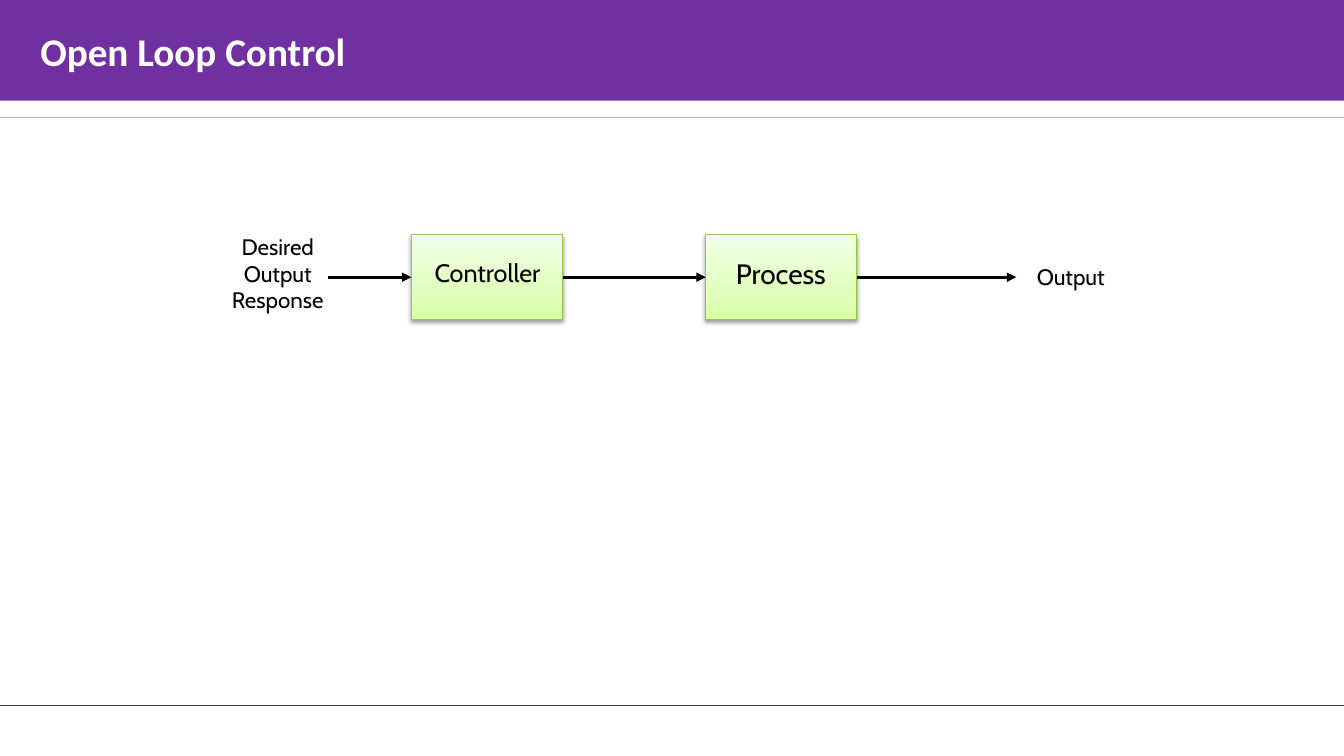
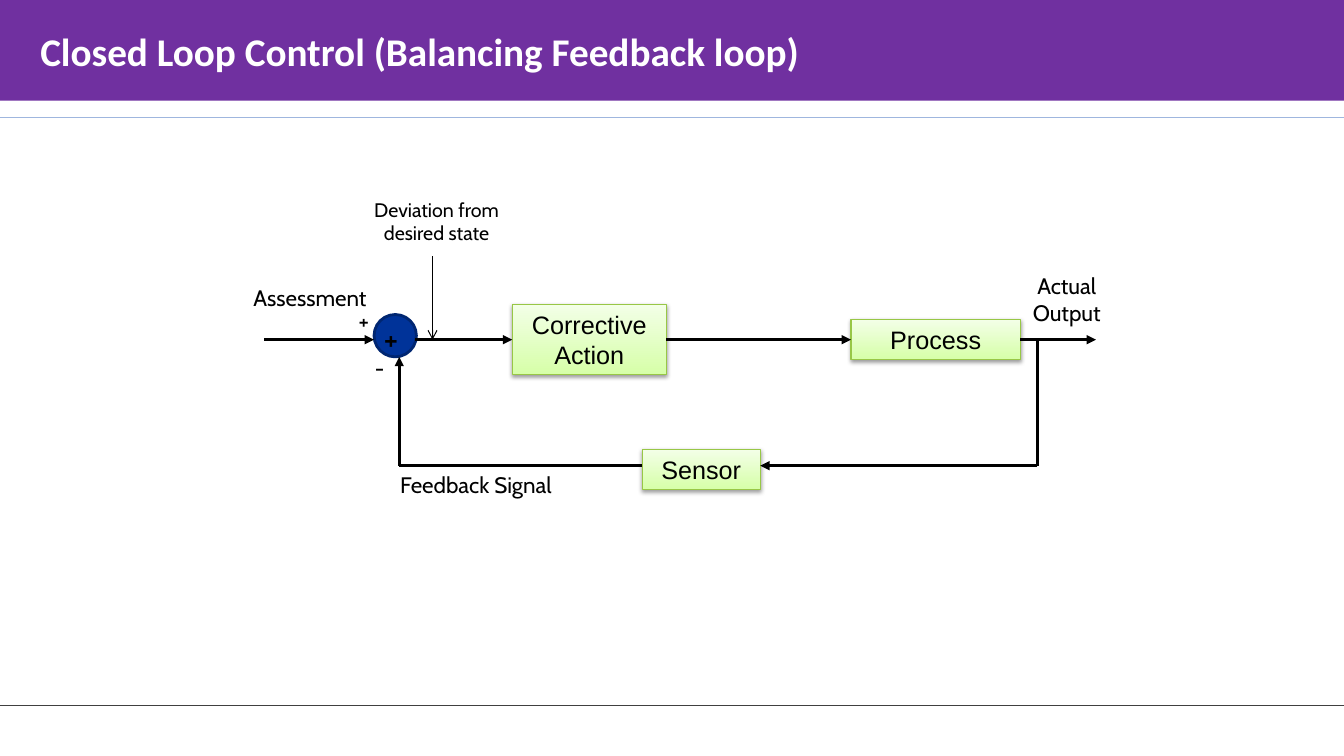
from dataclasses import dataclass
from typing import Optional

from lxml import etree
from pptx import Presentation
from pptx.dml import color
from pptx.enum import shapes, text
from pptx.oxml import ns
from pptx.util import Inches, Pt

# Shared look
WIDTH, HEIGHT = 13.33, 7.5
PURPLE, WHITE, BLACK = "7030A0", "FFFFFF", "000000"
NAVY, DARK_NAVY = "003399", "002671"
TOP_RULE, BOTTOM_RULE = "9FB6DE", "404040"
GREEN_BOTTOM, GREEN_TOP, GREEN_EDGE = "D6FFA8", "F3FFE7", "98C746"
TITLE_FONT, LABEL_FONT, BOX_FONT = "Calibri", "Cabin", "Arial"
TOP, LEFT, BOTTOM, RIGHT = range(4)


@dataclass
class Label:
    words: str
    left: float
    top: float
    width: float
    height: float
    size: float = 16
    centred: bool = True


@dataclass
class Block:
    left: float
    top: float
    width: float
    height: float
    words: str = ""


@dataclass
class Line:
    start: tuple[float, float]
    end: tuple[float, float]
    arrow: Optional[str] = "triangle"
    width: float = 2.25
    colour: str = BLACK
    # Block and side that an end is joined to
    begin_at: Optional[tuple] = None
    end_at: Optional[tuple] = None


def rgb(value: str) -> color.RGBColor:
    return color.RGBColor.from_string(value)


def write(shape, words: str, *, size: float, font: str = LABEL_FONT,
          colour: str = BLACK, bold: bool = False, centred: bool = True,
          anchor=text.MSO_ANCHOR.TOP, left_inset: float = 0.1) -> None:
    frame = shape.text_frame
    frame.word_wrap = True
    frame.vertical_anchor = anchor
    frame.margin_left = Inches(left_inset)
    paragraph = frame.paragraphs[0]
    paragraph.alignment = text.PP_ALIGN.CENTER if centred else text.PP_ALIGN.LEFT
    run = paragraph.add_run()
    run.text = words
    run.font.name = font
    run.font.size = Pt(size)
    run.font.bold = bold
    run.font.color.rgb = rgb(colour)


def add_plain_shape(slide, kind, left: float, top: float, width: float, height: float):
    shape = slide.shapes.add_shape(
        kind, Inches(left), Inches(top), Inches(width), Inches(height))
    shape.shadow.inherit = False
    return shape


def add_label(slide, label: Label) -> None:
    box = slide.shapes.add_textbox(
        Inches(label.left), Inches(label.top), Inches(label.width), Inches(label.height))
    write(box, label.words, size=label.size, centred=label.centred)


def add_soft_shadow(shape) -> None:
    effects = shape._element.spPr.find(ns.qn("a:effectLst"))
    shadow = etree.SubElement(
        effects, ns.qn("a:outerShdw"), blurRad=str(Pt(3.1)), dist=str(Pt(1.6)),
        dir="5400000", rotWithShape="0")
    tint = etree.SubElement(shadow, ns.qn("a:srgbClr"), val=BLACK)
    etree.SubElement(tint, ns.qn("a:alpha"), val="38000")


def add_block(slide, block: Block):
    shape = add_plain_shape(slide, shapes.MSO_SHAPE.RECTANGLE,
                            block.left, block.top, block.width, block.height)
    shape.fill.gradient()
    shape.fill.gradient_angle = 90
    for stop, tone in zip(shape.fill.gradient_stops, (GREEN_BOTTOM, GREEN_TOP)):
        stop.color.rgb = rgb(tone)
    shape.line.color.rgb = rgb(GREEN_EDGE)
    shape.line.width = Pt(0.75)
    add_soft_shadow(shape)
    if block.words:
        write(shape, block.words, size=18, font=BOX_FONT)
    return shape


def add_line(slide, line: Line) -> None:
    points = [Inches(value) for value in (*line.start, *line.end)]
    connector = slide.shapes.add_connector(shapes.MSO_CONNECTOR.STRAIGHT, *points)
    if line.begin_at:
        connector.begin_connect(*line.begin_at)
    if line.end_at:
        connector.end_connect(*line.end_at)
    connector.line.color.rgb = rgb(line.colour)
    connector.line.width = Pt(line.width)
    if line.arrow:
        etree.SubElement(connector.line._get_or_add_ln(), ns.qn("a:tailEnd"), type=line.arrow)
    etree.SubElement(connector._element.spPr, ns.qn("a:effectLst"))


def add_base_slide(presentation, title: str):
    """Add a slide with the two rules and the title band."""
    slide = presentation.slides.add_slide(presentation.slide_layouts[6])
    for y, colour in ((1.16, TOP_RULE), (7, BOTTOM_RULE)):
        add_line(slide, Line((0, y), (WIDTH, y), arrow=None, width=0.5, colour=colour))
    band = add_plain_shape(slide, shapes.MSO_SHAPE.RECTANGLE, 0, 0, WIDTH, 1)
    band.fill.solid()
    band.fill.fore_color.rgb = rgb(PURPLE)
    band.line.fill.background()
    write(band, title, size=28, font=TITLE_FONT, colour=WHITE, bold=True,
          centred=False, anchor=text.MSO_ANCHOR.MIDDLE, left_inset=0.4)
    return slide


def build_open_loop(presentation) -> None:
    slide = add_base_slide(presentation, "Open Loop Control")
    axis = 2.75

    # Blocks
    controller, process = [
        add_block(slide, Block(left, axis - 0.42, 1.5, 0.84)) for left in (4.08, 7)]

    # Signal path
    for line in (
        Line((3.25, axis), (4.08, axis), end_at=(controller, LEFT)),
        Line((5.58, axis), (7, axis), begin_at=(controller, RIGHT), end_at=(process, LEFT)),
        Line((8.5, axis), (10.08, axis), begin_at=(process, RIGHT)),
    ):
        add_line(slide, line)

    # Labels
    for label in (
        Label("Desired Output Response", 2.17, 2.26, 1.17, 0.91),
        Label("Controller", 4.17, 2.5, 1.33, 0.4, size=18),
        Label("Process", 7.08, 2.5, 1.33, 0.44, size=20),
        Label("Output", 10.08, 2.56, 1.08, 0.37),
    ):
        add_label(slide, label)


def build_closed_loop(presentation) -> None:
    slide = add_base_slide(presentation, "Closed Loop Control (Balancing Feedback loop)")
    axis, return_axis = 3.37, 4.62
    feedback_x, output_x = 3.96, 10.29

    # Blocks
    add_block(slide, Block(6.37, 4.46, 1.17, 0.4, "Sensor"))
    action = add_block(slide, Block(5.08, axis - 0.35, 1.53, 0.7, "Corrective Action"))
    process = add_block(slide, Block(8.44, axis - 0.2, 1.68, 0.4, "Process"))

    # Summing point
    junction = add_plain_shape(slide, shapes.MSO_SHAPE.OVAL, 3.71, 3.12, 0.42, 0.42)
    junction.fill.solid()
    junction.fill.fore_color.rgb = rgb(NAVY)
    junction.line.color.rgb = rgb(DARK_NAVY)
    junction.line.width = Pt(2)

    # Forward path, feedback path and pointer
    for line in (
        Line((2.62, axis), (3.71, axis)),
        Line((4.12, axis), (5.08, axis), end_at=(action, LEFT)),
        Line((6.61, axis), (8.44, axis), begin_at=(action, RIGHT), end_at=(process, LEFT)),
        Line((10.12, axis), (10.87, axis), begin_at=(process, RIGHT)),
        Line((output_x, axis), (output_x, return_axis), arrow=None),
        Line((output_x, return_axis), (7.54, return_axis)),
        Line((6.37, return_axis), (feedback_x, return_axis), arrow=None),
        Line((feedback_x, return_axis), (feedback_x, 3.54)),
        Line((4.29, 2.54), (4.29, axis), arrow="arrow", width=0.75),
    ):
        add_line(slide, line)

    # Labels
    for label in (
        Label("+", 3.71, 3.12, 0.33, 0.47, size=22, centred=False),
        Label("+", 3.46, 3, 0.33, 0.37, centred=False),
        Label("-", 3.62, 3.46, 0.33, 0.37, centred=False),
        Label("Assessment", 2.37, 2.77, 1.41, 0.37),
        Label("Deviation from desired state", 3.54, 1.91, 1.58, 0.57, size=14),
        Label("Actual Output", 10.12, 2.65, 0.92, 0.64),
        Label("Feedback Signal", 3.87, 4.62, 2.08, 0.37, centred=False),
    ):
        add_label(slide, label)


def main() -> None:
    presentation = Presentation()
    presentation.slide_width = Inches(WIDTH)
    presentation.slide_height = Inches(HEIGHT)
    build_open_loop(presentation)
    build_closed_loop(presentation)
    presentation.save("out.pptx")


if __name__ == "__main__":
    main()
